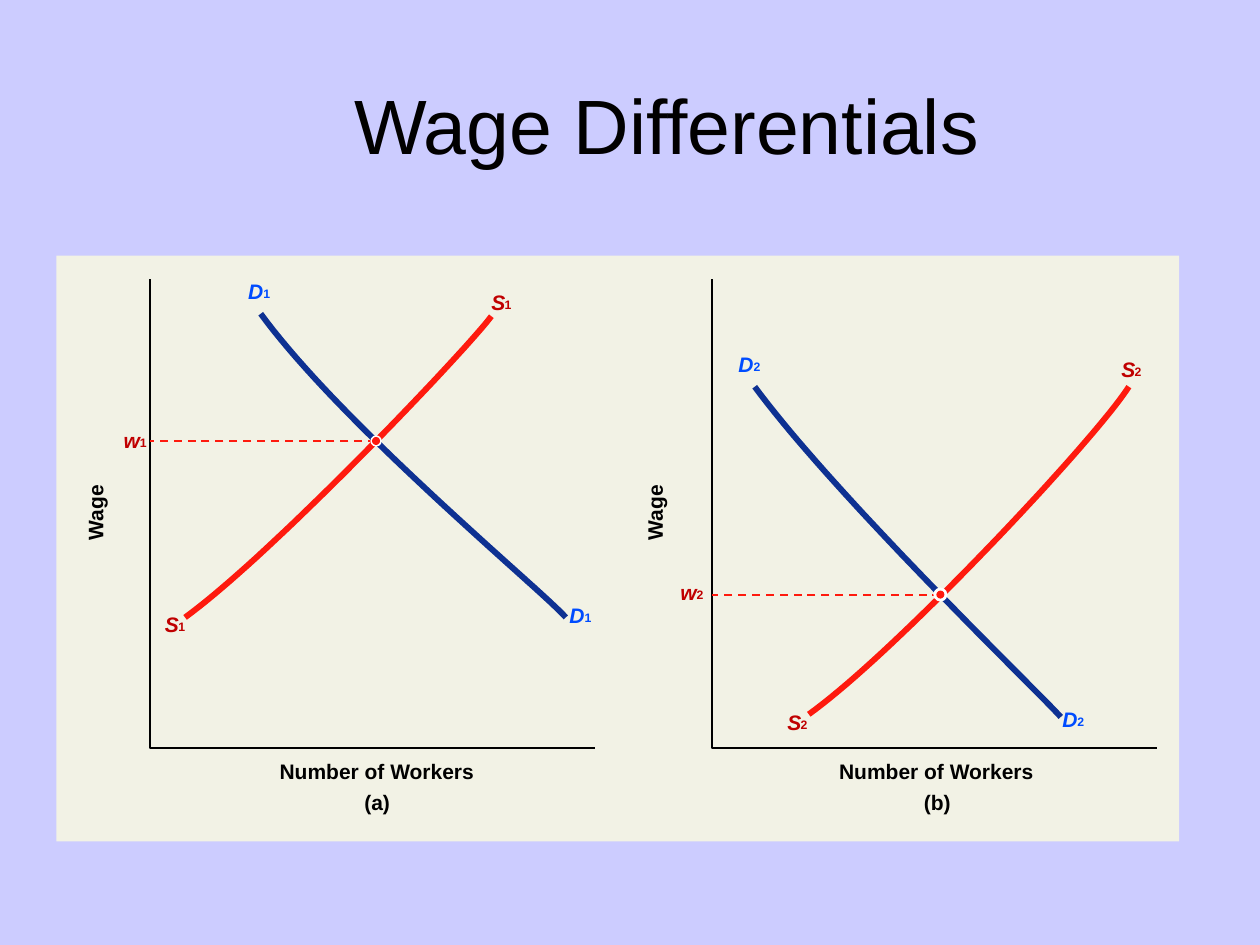
"""Builds a slide with two labour-market diagrams that explain wage differentials."""
from dataclasses import dataclass

from lxml.etree import SubElement
from pptx import Presentation
from pptx.dml.color import RGBColor
from pptx.enum.dml import MSO_LINE
from pptx.enum.shapes import MSO_CONNECTOR, MSO_SHAPE
from pptx.enum.text import MSO_ANCHOR, MSO_AUTO_SIZE, PP_ALIGN
from pptx.oxml.ns import qn
from pptx.util import Pt


@dataclass(frozen=True)
class Theme:
    """Colours, type sizes and line widths of the slide."""
    font: str = "Arial"
    back: str = "CCCCFF"
    panel: str = "F2F2E5"
    title: str = "010000"
    ink: str = "000000"
    white: str = "FFFFFF"
    supply: str = "FE1A0E"
    supply_text: str = "C00000"
    demand: str = "0E3192"
    demand_text: str = "004CFF"
    title_size: float = 44
    label_size: float = 12
    sub_size: float = 7
    thin: float = 1.13
    thick: float = 3.38


THEME = Theme()


@dataclass(frozen=True)
class Market:
    """Geometry of one diagram, in points."""
    sub: str
    caption: str
    axis_x: float
    text_x: float
    supply: tuple
    supply_labels: tuple
    demand: tuple
    demand_labels: tuple
    wage_label: tuple
    balance: tuple
    halo: float


MARKETS = (
    Market("1", "(a)", 85.7, 36.7,
           ((105.8, 352.8), (155.5, 316.8), (267.1, 199.4), (280.8, 180.7)),
           ((280.8, 165.6), (94.3, 349.2)),
           ((149, 179.3), (195.8, 243.4), (311.8, 339.1), (323.3, 352.8)),
           ((141.8, 159.1), (325.4, 344.2)),
           (70.6, 244.1), (214.9, 252), 6.5),
    Market("2", "(b)", 406.8, 356.4,
           ((462.2, 408.2), (512.6, 372.2), (627.1, 249.8), (645.1, 221)),
           ((640.8, 203.8), (450, 405.4)),
           ((431.3, 221), (478.1, 284.4), (594, 396), (606.2, 409.7)),
           ((421.9, 200.9), (607, 403.9)),
           (388.8, 331.2), (537.4, 339.8), 8),
)


def rgb(color):
    """Return a colour object for a hex string."""
    return RGBColor.from_string(color)


def style_run(r, size, color, bold=False, italic=False):
    """Format one run in the slide font."""
    r.font.name, r.font.size = THEME.font, Pt(size)
    r.font.bold, r.font.italic = bold, italic
    r.font.color.rgb = rgb(color)


def add_title(s, text):
    """Place and format the title placeholder."""
    sp = s.shapes.title
    sp.left, sp.top, sp.width, sp.height = Pt(18), Pt(17.3), Pt(690), Pt(107)
    tf = sp.text_frame
    tf.text = text
    tf.vertical_anchor = MSO_ANCHOR.MIDDLE
    p = tf.paragraphs[0]
    p.alignment = PP_ALIGN.CENTER
    pPr = p._p.get_or_add_pPr()
    pPr.set("marL", "0")
    pPr.set("indent", str(Pt(36)))
    style_run(p.runs[0], THEME.title_size, THEME.title)


def add_label(s, text, x, y, w, size=THEME.label_size, color=THEME.ink,
              italic=False, rotation=0):
    """Add a bold one-line text without margins."""
    sp = s.shapes.add_textbox(Pt(x), Pt(y), Pt(w), Pt(size * 1.2))
    sp.rotation = rotation
    tf = sp.text_frame
    tf.margin_left = tf.margin_right = tf.margin_top = tf.margin_bottom = 0
    tf.word_wrap = False
    tf.auto_size = MSO_AUTO_SIZE.SHAPE_TO_FIT_TEXT
    tf.text = text
    style_run(tf.paragraphs[0].runs[0], size, color, True, italic)


def add_symbol(s, letter, sub, at, color):
    """Add an italic letter with a small index beside it."""
    x, y = at
    w = {"S": 7.6, "D": 8.7, "w": 9.3}[letter]
    add_label(s, letter, x, y, w, color=color, italic=True)
    add_label(s, sub, x + w, y + 4.5, 5.5, THEME.sub_size, color)


def add_fill(s, kind, x, y, w, h, color):
    """Add a filled preset shape without outline."""
    sp = s.shapes.add_shape(kind, Pt(x), Pt(y), Pt(w), Pt(h))
    sp.shadow.inherit = False
    sp.fill.solid()
    sp.fill.fore_color.rgb = rgb(color)
    sp.line.fill.background()


def add_path(s, points, color, width):
    """Draw an open line through the points."""
    pts = [(Pt(x), Pt(y)) for x, y in points]
    fb = s.shapes.build_freeform(*pts[0])
    fb.add_line_segments(pts[1:], close=False)
    sp = fb.convert_to_shape()
    sp.shadow.inherit = False
    sp.fill.background()
    sp.line.color.rgb = rgb(color)
    sp.line.width = Pt(width)


def bezier(points, steps=40):
    """Return evenly spaced parameter points of a cubic curve."""
    def blend(t, a, b, c, d):
        u = 1 - t
        return u**3 * a + 3 * u * u * t * b + 3 * u * t * t * c + t**3 * d

    return [tuple(blend(i / steps, *axis) for axis in zip(*points))
            for i in range(steps + 1)]


def add_dashes(s, x1, x2, y):
    """Draw a dashed horizontal connector."""
    c = s.shapes.add_connector(MSO_CONNECTOR.STRAIGHT, Pt(x1), Pt(y), Pt(x2), Pt(y))
    c.line.color.rgb = rgb(THEME.supply)
    c.line.width = Pt(THEME.thin)
    c.line.dash_style = MSO_LINE.DASH
    SubElement(c._element.spPr, qn("a:effectLst"))


def add_dot(s, center, size, color):
    """Add a round mark around a centre."""
    x, y = center
    add_fill(s, MSO_SHAPE.OVAL, x - size / 2, y - size / 2, size, size, color)


def add_curve(s, letter, sub, points, labels, color, text_color):
    """Draw a curve and name both its ends."""
    add_path(s, bezier(points), color, THEME.thick)
    for at in labels:
        add_symbol(s, letter, sub, at, text_color)


def add_market(s, m):
    """Draw one diagram with axes, curves and equilibrium wage."""
    axes = ((m.axis_x, 159.6), (m.axis_x, 427.2), (m.axis_x + 254.2, 427.2))
    add_path(s, axes, THEME.ink, THEME.thin)
    add_label(s, "Wage", m.text_x, 283.7, 35.3, rotation=270)
    add_label(s, "Number of Workers", m.text_x + 123.1, 433.4, 114.5)
    add_label(s, m.caption, m.text_x + 171.5, 451.4, 18.4)
    add_curve(s, "S", m.sub, m.supply, m.supply_labels, THEME.supply, THEME.supply_text)
    add_curve(s, "D", m.sub, m.demand, m.demand_labels, THEME.demand, THEME.demand_text)
    add_dashes(s, m.balance[0], m.axis_x, m.balance[1])
    add_dot(s, m.balance, m.halo, THEME.white)
    add_dot(s, m.balance, 4.6, THEME.supply)
    add_symbol(s, "w", m.sub, m.wage_label, THEME.supply_text)


def main():
    """Build and save the slide."""
    prs = Presentation()
    prs.slide_width, prs.slide_height = Pt(720), Pt(540)
    s = prs.slides.add_slide(prs.slide_layouts[5])
    s.background.fill.solid()
    s.background.fill.fore_color.rgb = rgb(THEME.back)
    add_title(s, "Wage Differentials")
    add_fill(s, MSO_SHAPE.RECTANGLE, 32.2, 146.1, 641.7, 334.7, THEME.panel)
    for m in MARKETS:
        add_market(s, m)
    prs.save("out.pptx")


if __name__ == "__main__":
    main()
